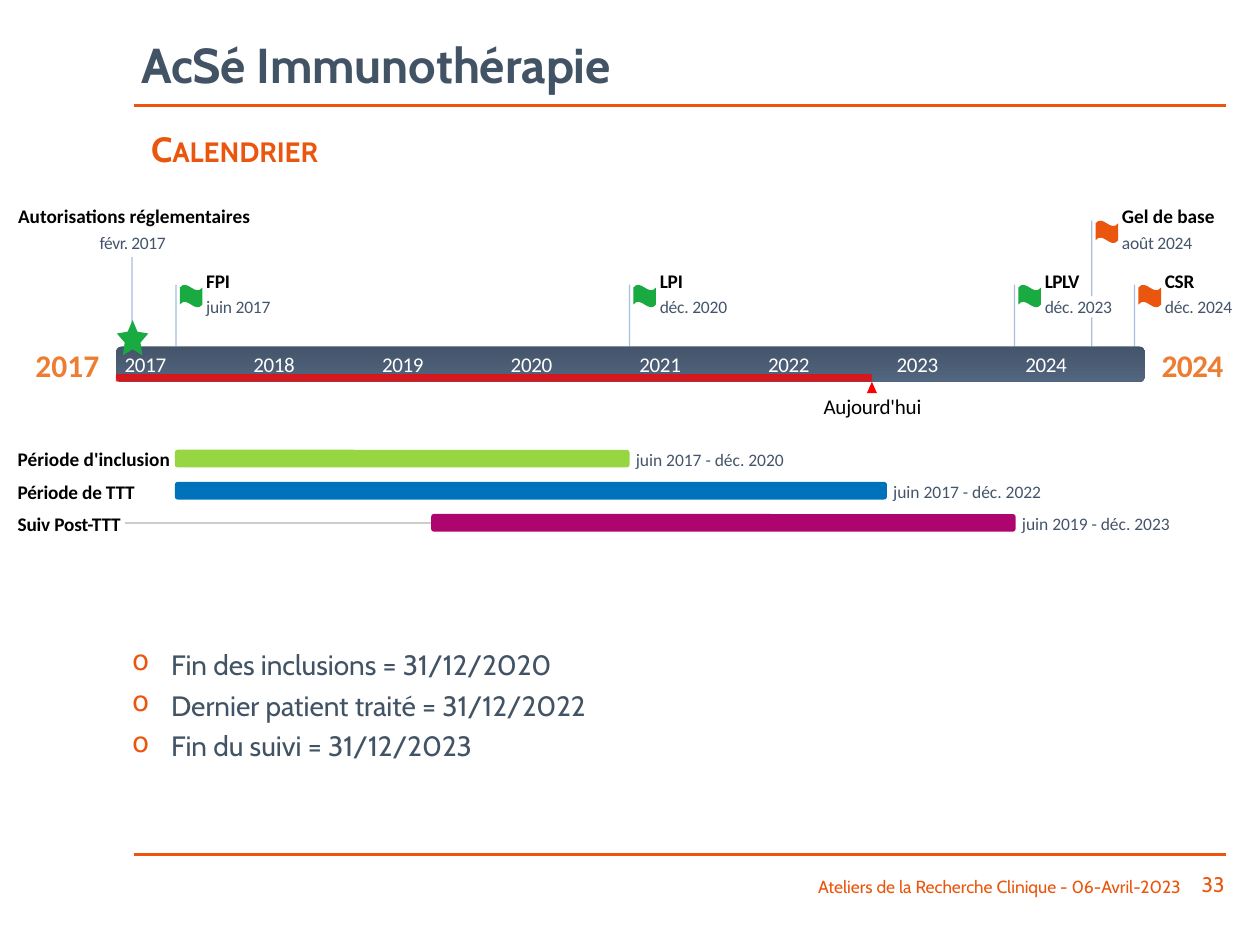
import pptx
import pptx.chart.data
import pptx.dml.color
import pptx.enum.dml
import pptx.enum.shapes
import pptx.enum.text
import pptx.oxml
import pptx.oxml.ns
import pptx.util
from lxml import etree

SHAPE = pptx.enum.shapes.MSO_SHAPE
ALIGN = {name: getattr(pptx.enum.text.PP_ALIGN, name.upper()) for name in ("left", "center", "right")}
ORANGE, SLATE, NAVY, GREEN, BLACK = "EA560D", "415364", "44546A", "1AAA42", "000000"

TITLE = "AcSé Immunothérapie"
SUBTITLE = "Calendrier"
FOOTER, PAGE = "Ateliers de la Recherche Clinique - 06-Avril-2023", "33"
CONCLUSIONS = [
    "Fin des inclusions = 31/12/2020",
    "Dernier patient traité = 31/12/2022",
    "Fin du suivi = 31/12/2023",
]
YEARS = range(2017, 2025)
END_YEARS = [("2017", 0.28, 0.51, 0), ("2024", 9.22, 0.49, -0.4)]
TODAY = ("Aujourd'hui", 70.5)
APPROVAL = ("Autorisations réglementaires", "févr. 2017", 1.5)
MILESTONES = [
    ("FPI", "juin 2017", 5.6, 2.26, GREEN, 0.19, -0.1),
    ("LPI", "déc. 2020", 47.9, 2.26, GREEN, 0.19, -0.1),
    ("LPLV", "déc. 2023", 83.8, 2.26, GREEN, 0.29, -0.3),
    ("Gel de base", "août 2024", 91, 1.75, ORANGE, 0.76, 0),
    ("CSR", "déc. 2024", 95, 2.26, ORANGE, 0.25, -0.2),
]
PERIODS = [
    ("Période d'inclusion", "juin 2017 - déc. 2020", 5.5, 47.9, "96D642", 1.22, 0),
    ("Période de TTT", "juin 2017 - déc. 2022", 5.5, 71.9, "0072BC", 1.4, -0.1),
    ("Suiv Post-TTT", "juin 2019 - déc. 2023", 29.4, 83.9, "AD0470", 0.86, -0.1),
]

BAND_LEFT, BAND_TOP, BAND_WIDTH, BAND_HEIGHT = 0.92, 2.75, 8.17, 0.28
BAND_BOTTOM = BAND_TOP + BAND_HEIGHT
YEAR_WIDTH = BAND_WIDTH / len(YEARS)
PERIOD_TOP, PERIOD_STEP, PERIOD_HEIGHT = 3.57, 0.255, 0.14
FLAG = 0.18
DATE_TOP, DATE_BOTTOM = 2.35, 2.52


def inches(*lengths):
    """Convert lengths in inches to slide units."""
    return [pptx.util.Inches(length) for length in lengths]


def rgb(value):
    """Return the colour for a hex string."""
    return pptx.dml.color.RGBColor.from_string(value)


def month_x(month):
    """Return the horizontal place of a month counted from January 2017."""
    return BAND_LEFT + month * YEAR_WIDTH / 12


def set_alpha(fill, percent):
    """Make a solid fill partly transparent."""
    color = fill._xPr.find(".//" + pptx.oxml.ns.qn("a:srgbClr"))
    etree.SubElement(color, pptx.oxml.ns.qn("a:alpha")).set("val", str(percent * 1000))


def format_run(run, size, color, font="Calibri", bold=False, spacing=0, small_caps=False):
    """Set the character format of a run."""
    run.font.size, run.font.name, run.font.bold = pptx.util.Pt(size), font, bold
    run.font.color.rgb = rgb(color)
    properties = run.font._element
    if spacing:
        properties.set("spc", str(round(spacing * 100)))
    if small_caps:
        properties.set("cap", "small")


def add_text(slide, text, box, align="left", anchor="middle", insets=(0, 0), wrap=True, **style):
    """Add a one-line text box and return it."""
    label = slide.shapes.add_textbox(*inches(*box))
    frame = label.text_frame
    frame.word_wrap = wrap
    frame.vertical_anchor = getattr(pptx.enum.text.MSO_ANCHOR, anchor.upper())
    frame.margin_left = frame.margin_right = pptx.util.Inches(insets[0])
    frame.margin_top = frame.margin_bottom = pptx.util.Inches(insets[1])
    paragraph = frame.paragraphs[0]
    paragraph.alignment = ALIGN[align]
    run = paragraph.add_run()
    run.text = text
    format_run(run, **style)
    return label


def add_figure(slide, kind, box, color=None, alpha=None, corner=None):
    """Add a borderless preset shape and return it."""
    figure = slide.shapes.add_shape(kind, *inches(*box))
    figure.shadow.inherit = False
    figure.line.fill.background()
    if color:
        figure.fill.solid()
        figure.fill.fore_color.rgb = rgb(color)
    if alpha:
        set_alpha(figure.fill, alpha)
    if corner is not None:
        figure.adjustments[0] = corner
    return figure


def add_line(slide, start, end, color, width=0.75, alpha=None):
    """Add a straight line without shadow and return it."""
    line = slide.shapes.add_connector(pptx.enum.shapes.MSO_CONNECTOR.STRAIGHT, *inches(*start, *end))
    line.line.color.rgb = rgb(color)
    line.line.width = pptx.util.Pt(width)
    etree.SubElement(line._element.spPr, pptx.oxml.ns.qn("a:effectLst"))
    if alpha:
        set_alpha(line.line.fill, alpha)
    return line


def add_frame(slide):
    """Add the title, subtitle, rules and footer."""
    title = slide.shapes.title
    title.left, title.top, title.width, title.height = inches(1.02, 0.28, 8.69, 0.5)
    frame = title.text_frame
    frame.auto_size = pptx.enum.text.MSO_AUTO_SIZE.NONE
    frame.vertical_anchor = pptx.enum.text.MSO_ANCHOR.TOP
    frame.text = TITLE
    frame.paragraphs[0].alignment = ALIGN["left"]
    frame.paragraphs[0].line_spacing = 0.9
    format_run(frame.paragraphs[0].runs[0], 28, SLATE, "Cabin", bold=True)
    for y in (0.84, 6.78):
        add_line(slide, (1.06, y), (9.73, y), ORANGE, 1.5)
    footer = dict(align="right", insets=(0.04, 0), font="Cabin", color=ORANGE)
    add_text(slide, PAGE, (9.38, 6.92, 0.38, 0.2), wrap=False, size=12, **footer)
    add_text(slide, FOOTER, (5.87, 6.95, 3.54, 0.17), size=10, **footer)
    add_text(slide, SUBTITLE, (1.1, 0.96, 1.65, 0.44), anchor="top", insets=(0.1, 0.05), wrap=False,
             size=20, font="Cabin", color=ORANGE, bold=True, small_caps=True)


def add_conclusions(slide):
    """Add the bulleted list."""
    frame = slide.shapes.add_textbox(*inches(0.95, 5.09, 8.68, 1.16)).text_frame
    frame.word_wrap = True
    for index, text in enumerate(CONCLUSIONS):
        paragraph = frame.add_paragraph() if index else frame.paragraphs[0]
        properties = paragraph._p.get_or_add_pPr()
        indent = pptx.util.Inches(0.31)
        properties.set("marL", str(indent))
        properties.set("indent", str(-indent))
        if index:
            paragraph.space_before = pptx.util.Pt(4)
        bullet_color = etree.SubElement(properties, pptx.oxml.ns.qn("a:buClr"))
        etree.SubElement(bullet_color, pptx.oxml.ns.qn("a:srgbClr")).set("val", ORANGE)
        etree.SubElement(properties, pptx.oxml.ns.qn("a:buChar")).set("char", "o")
        run = paragraph.add_run()
        run.text = text
        format_run(run, 16, SLATE, "Cabin")


def add_band(slide):
    """Add the year band with its progress and today's mark."""
    for year, left, width, spacing in END_YEARS:
        add_text(slide, year, (left, 2.74, width, 0.31), align="center", wrap=False,
                 size=18, color="ED7D31", bold=True, spacing=spacing)
    band = add_figure(slide, SHAPE.ROUNDED_RECTANGLE, (BAND_LEFT, BAND_TOP, BAND_WIDTH, BAND_HEIGHT), corner=0.16)
    band.fill.gradient()
    band.fill.gradient_angle = 270
    for stop, color, position in zip(band.fill.gradient_stops, (NAVY, "52667F"), (0, 1)):
        stop.color.rgb, stop.position = rgb(color), position
    today, month = TODAY
    x = month_x(month)
    add_figure(slide, SHAPE.ROUNDED_RECTANGLE, (BAND_LEFT, BAND_BOTTOM - 0.06, x - BAND_LEFT, 0.06),
               "FF0000", alpha=75, corner=0.16)
    add_figure(slide, SHAPE.ISOSCELES_TRIANGLE, (x - 0.04, BAND_BOTTOM, 0.08, 0.09), "FF0000")
    add_text(slide, today, (x - 0.4, 3.12, 0.81, 0.2), align="center", wrap=False,
             size=12, color=BLACK, spacing=-0.1)
    for index, year in enumerate(YEARS):
        add_text(slide, str(year), (BAND_LEFT + 0.07 + index * YEAR_WIDTH, 2.79, 0.33, 0.2), wrap=False,
                 size=12, color="FFFFFF", spacing=-0.2)


def add_milestones(slide):
    """Add the approval star and the flagged milestones."""
    stem = dict(color="4F81BD", alpha=50)
    name_style = dict(size=11, color=BLACK, bold=True)
    date_style = dict(size=10, color=NAVY)
    name, date, month = APPROVAL
    x = month_x(month)
    add_line(slide, (x, 2.04), (x, 2.68), **stem)
    add_text(slide, name, (0.14, 1.62, 1.85, 0.19), align="center", **name_style)
    add_text(slide, date, (x - 0.28, 1.84, 0.57, 0.17), align="center", spacing=-0.2, **date_style)
    add_figure(slide, SHAPE.STAR_5_POINT, (x - 0.12, 2.54, 0.25, 0.28), GREEN, corner=0.25)
    for name, date, month, top, color, width, spacing in MILESTONES:
        x = month_x(month)
        gap = [DATE_TOP, DATE_BOTTOM] if top < 2 else []
        ends = [top, *gap, BAND_TOP]
        for start, end in zip(ends[::2], ends[1::2]):
            add_line(slide, (x, start), (x, end), **stem)
        add_figure(slide, SHAPE.WAVE, (x + 0.03, top, FLAG, FLAG), color)
        add_text(slide, name, (x + 0.24, top - 0.13, width, 0.19), spacing=spacing, **name_style)
        add_text(slide, date, (x + 0.24, top + 0.09, 0.58, 0.17), spacing=-0.1, **date_style)


def add_periods(slide):
    """Add the period bars with their names and dates."""
    for index, (name, dates, start, end, color, width, spacing) in enumerate(PERIODS):
        top = PERIOD_TOP + index * PERIOD_STEP
        left, right = month_x(start), month_x(end)
        bar = add_figure(slide, SHAPE.ROUNDED_RECTANGLE, (left, top, right - left, PERIOD_HEIGHT), color, corner=0.16)
        if left > 2:
            middle = top + PERIOD_HEIGHT / 2
            leader = add_line(slide, (0.99, middle), (left, middle), "CCCCCC")
            leader.end_connect(bar, 1)
        add_text(slide, name, (0.14, top - 0.02, width, 0.19), size=11, color=BLACK, bold=True, spacing=spacing)
        add_text(slide, dates, (right + 0.05, top - 0.01, 1.2, 0.17), size=10, color=NAVY)


def main():
    """Build and save the slide."""
    deck = pptx.Presentation()
    deck.slide_width, deck.slide_height = inches(10, 7.5)
    slide = deck.slides.add_slide(deck.slide_layouts[5])
    for add_part in (add_frame, add_conclusions, add_band, add_milestones, add_periods):
        add_part(slide)
    deck.save("out.pptx")


if __name__ == "__main__":
    main()
